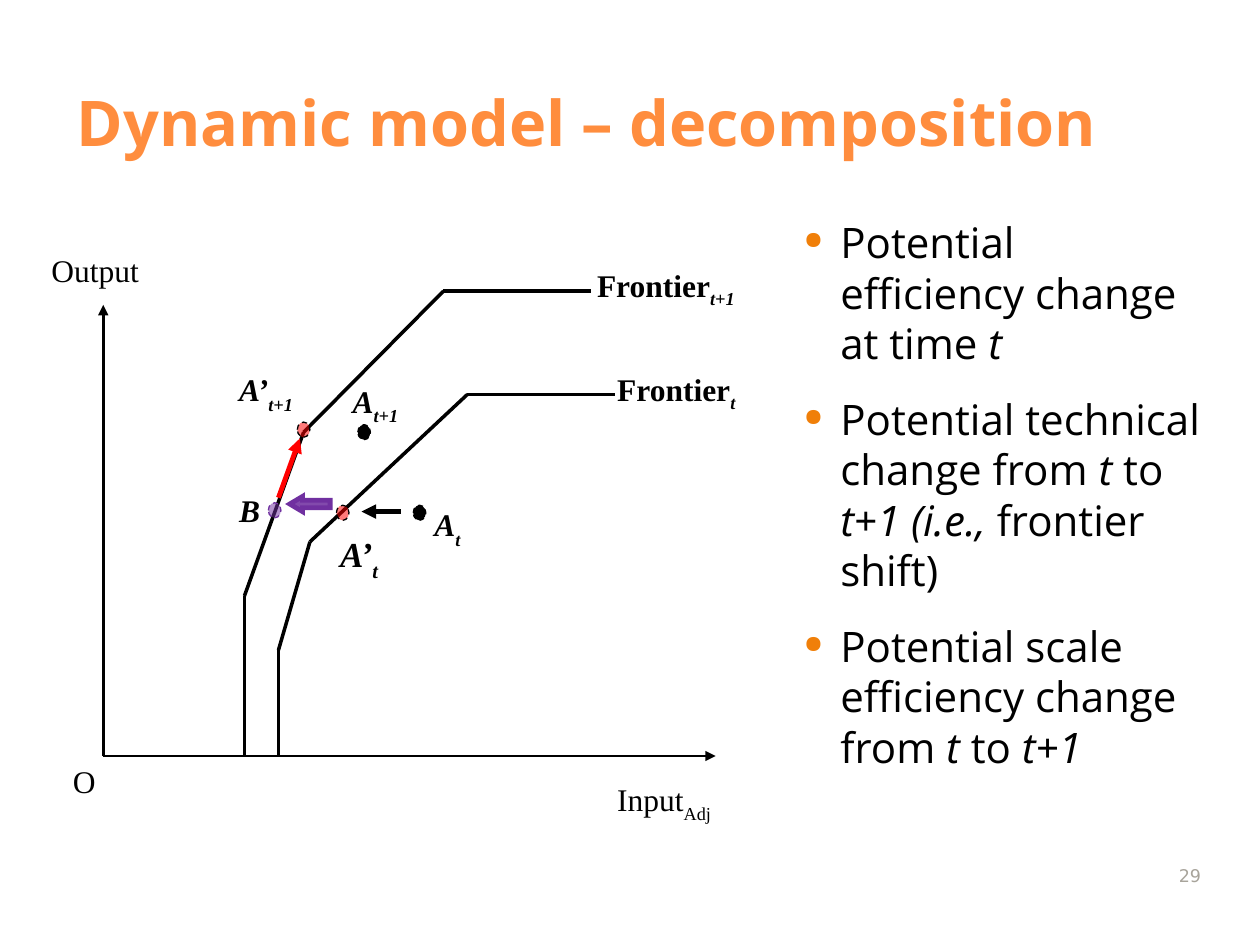
from itertools import pairwise

from lxml.etree import SubElement
from pptx import Presentation
from pptx.dml.color import RGBColor
from pptx.enum.dml import MSO_LINE
from pptx.enum.shapes import MSO_CONNECTOR, MSO_SHAPE
from pptx.enum.text import MSO_ANCHOR, MSO_AUTO_SIZE, PP_ALIGN
from pptx.oxml.ns import qn
from pptx.util import Inches, Pt

SANS, SERIF = "Open Sans", "Times New Roman"
BLACK, RED, PURPLE = "000000", "FF0000", "7030A0"
ORANGE, BULLET, GREY = "FF8D3E", "F07F09", "A8A49B"

TITLE = "Dynamic model – decomposition"
PAGE = "29"

# Runs alternate between upright and italic, starting upright
BULLETS = [
    ("Potential efficiency change at time ", "t"),
    ("Potential technical change from ", "t", " to ", "t+1 (i.e., ", "frontier shift)"),
    ("Potential scale efficiency change from ", "t", " to ", "t+1"),
]

ORIGIN = (0.82, 6)
AXIS_ENDS = [(5.68, 6), (0.82, 2.42)]
FRONTIERS = [
    [(2.21, 6), (2.21, 5.16), (2.46, 4.3), (3.71, 3.13), (4.88, 3.13)],
    [(1.94, 6), (1.94, 4.73), (2.41, 3.43), (3.52, 2.31), (4.69, 2.31)],
]

# left, top, fill, outline, opacity in percent
POINT_SIZE = (0.1, 0.12)
POINTS = [
    (3.28, 4.01, BLACK, BLACK, 100),
    (2.84, 3.37, BLACK, BLACK, 100),
    (2.67, 4.01, RED, BLACK, 52),
    (2.36, 3.35, RED, BLACK, 52),
    (2.13, 3.99, PURPLE, PURPLE, 52),
]

# start, end, colour
MOVES = [
    ((3.18, 4.06), (2.87, 4.06), BLACK),
    ((2.21, 3.95), (2.38, 3.48), RED),
]
SHIFT_BOX = (2.3, 3.94, 0.32, 0.12)

# box, text, subscript, size, baseline percent, bold, italic text, italic subscript
LABELS = [
    ((0.31, 1.94, 0.94, 0.49), "Output", "", 18, 0, False, False, False),
    ((0.48, 6, 0.42, 0.42), "O", "", 18, 0, False, False, False),
    ((4.8, 6.14, 1.13, 0.42), "Input", "Adj", 18, -30, False, False, False),
    ((4.8, 2.89, 1.21, 0.42), "Frontier", "t", 18, -25, True, False, True),
    ((4.64, 2.06, 1.37, 0.46), "Frontier", "t+1", 18, -25, True, False, True),
    ((3.35, 3.96, 0.53, 0.44), "A", "t", 18, -30, True, True, True),
    ((2.7, 2.98, 0.66, 0.44), "A", "t+1", 18, -30, True, True, True),
    ((2.6, 4.18, 0.65, 0.42), "A’", "t", 20, -30, True, True, True),
    ((1.8, 2.89, 0.81, 0.44), "A’", "t+1", 18, -30, True, True, True),
    ((1.8, 3.85, 0.32, 0.37), "B", "", 18, 0, True, True, True),
]


def rgb(value):
    return RGBColor.from_string(value)


def inches(values):
    return [Inches(value) for value in values]


def style(run, size, font, color, bold=False, italic=False):
    run.font.size, run.font.name = Pt(size), font
    run.font.color.rgb = rgb(color)
    run.font.bold, run.font.italic = bold, italic


def add_text_frame(slide, box):
    frame = slide.shapes.add_textbox(*inches(box)).text_frame
    frame.word_wrap = True
    return frame


def add_line(slide, start, end, color, width, arrow=False):
    line = slide.shapes.add_connector(MSO_CONNECTOR.STRAIGHT, *inches(start + end))
    line.line.color.rgb, line.line.width = rgb(color), Pt(width)
    if arrow:
        SubElement(line.line._get_or_add_ln(), qn("a:tailEnd"), type="triangle")
    SubElement(line._element.spPr, qn("a:effectLst"))


def add_filled(slide, kind, box, fill, outline, width, opacity):
    shape = slide.shapes.add_shape(kind, *inches(box))
    shape.shadow.inherit = False
    shape.fill.solid()
    shape.fill.fore_color.rgb = rgb(fill)
    shape.line.color.rgb, shape.line.width = rgb(outline), Pt(width)
    if opacity < 100:
        color = shape._element.spPr.find(qn("a:solidFill"))[0]
        SubElement(color, qn("a:alpha"), val=str(opacity * 1000))
    return shape


def add_bullet(paragraph):
    props = paragraph._p.get_or_add_pPr()
    props.set("marL", str(Inches(0.29)))
    props.set("indent", str(-Inches(0.29)))
    SubElement(SubElement(props, qn("a:buClr")), qn("a:srgbClr"), val=BULLET)
    SubElement(props, qn("a:buSzPct"), val="58000")
    SubElement(props, qn("a:buChar"), char="●")


def add_title(slide):
    title = slide.shapes.title
    title.left, title.top, title.width, title.height = inches((0.51, 0.52, 8.95, 0.79))
    frame = title.text_frame
    frame.text = TITLE
    frame.auto_size = MSO_AUTO_SIZE.NONE
    frame.vertical_anchor = MSO_ANCHOR.BOTTOM
    frame.margin_bottom = Inches(0.05)
    frame.paragraphs[0].alignment = PP_ALIGN.LEFT
    style(frame.paragraphs[0].runs[0], 36, SANS, ORANGE, bold=True)


def add_bullets(slide):
    frame = add_text_frame(slide, (6.18, 1.62, 3.47, 4.95))
    frame.margin_left, frame.margin_top = Inches(0.2), Inches(0.1)
    for index, parts in enumerate(BULLETS):
        paragraph = frame.add_paragraph() if index else frame.paragraphs[0]
        paragraph.space_before = Pt(14.5 if index else 2.5)
        add_bullet(paragraph)
        for position, part in enumerate(parts):
            run = paragraph.add_run()
            run.text = part
            style(run, 24, SANS, BLACK, italic=position % 2 == 1)


def add_diagram(slide):
    for end in AXIS_ENDS:
        add_line(slide, ORIGIN, end, BLACK, 1.5, arrow=True)
    for frontier in FRONTIERS:
        for start, end in pairwise(frontier):
            add_line(slide, start, end, BLACK, 2)
    for left, top, fill, outline, opacity in POINTS:
        point = add_filled(slide, MSO_SHAPE.OVAL, (left, top, *POINT_SIZE),
                           fill, outline, 0.75, opacity)
        point.line.dash_style = MSO_LINE.DASH
    for start, end, color in MOVES:
        add_line(slide, start, end, color, 2.75, arrow=True)
    shift = add_filled(slide, MSO_SHAPE.LEFT_ARROW, SHIFT_BOX, PURPLE, PURPLE, 2.75, 87)
    shift.adjustments[1] = 0.84
    SubElement(shift.line._get_or_add_ln(), qn("a:miter"), lim="800000")


def add_labels(slide):
    for box, text, subscript, size, baseline, bold, italic, sub_italic in LABELS:
        paragraph = add_text_frame(slide, box).paragraphs[0]
        run = paragraph.add_run()
        run.text = text
        style(run, size, SERIF, BLACK, bold, italic)
        if subscript:
            run = paragraph.add_run()
            run.text = subscript
            style(run, size, SERIF, BLACK, bold, sub_italic)
            run.font._element.set("baseline", str(baseline * 1000))


def add_page_number(slide):
    frame = add_text_frame(slide, (9.13, 6.68, 0.5, 0.4))
    frame.vertical_anchor = MSO_ANCHOR.BOTTOM
    frame.text = PAGE
    frame.paragraphs[0].alignment = PP_ALIGN.RIGHT
    style(frame.paragraphs[0].runs[0], 10, "DejaVu Sans", GREY)


def main():
    deck = Presentation()
    deck.slide_width, deck.slide_height = Inches(10), Inches(7.5)
    slide = deck.slides.add_slide(deck.slide_layouts.get_by_name("Title Only"))
    add_title(slide)
    add_bullets(slide)
    add_diagram(slide)
    add_labels(slide)
    add_page_number(slide)
    deck.save("out.pptx")


if __name__ == "__main__":
    main()
